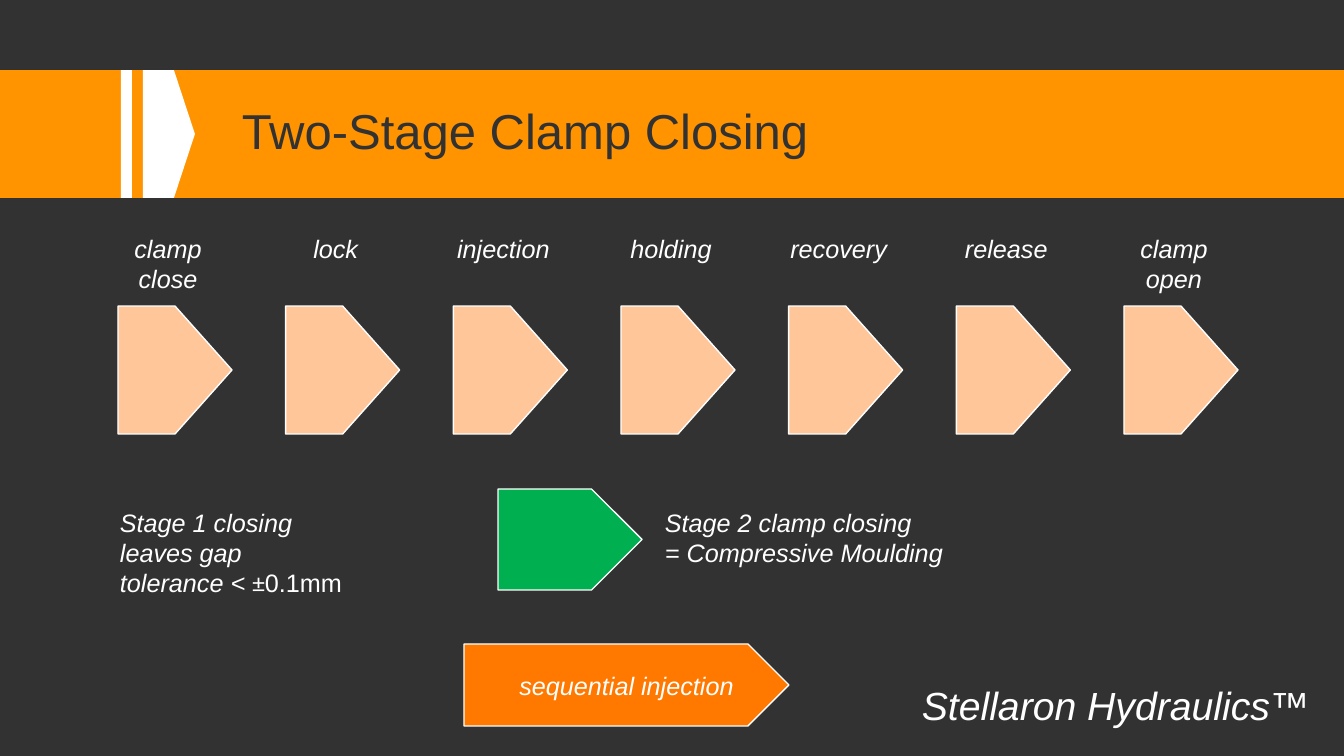
"""Build the two-stage clamp closing process slide."""
from pptx import Presentation
from pptx.dml.color import RGBColor
from pptx.enum.shapes import MSO_SHAPE as Shape
from pptx.enum.text import MSO_ANCHOR as Anchor, MSO_AUTO_SIZE as AutoSize, PP_ALIGN as Align
from pptx.util import Pt

COLORS = {"dark": "323232", "band": "FF9300", "white": "FFFFFF",
          "peach": "FFC699", "orange": "FF7900", "green": "00B050"}
STEPS = ["clamp close", "lock", "injection", "holding", "recovery", "release", "clamp open"]
TITLE = "Two-Stage Clamp Closing"
STAGE_1 = ["Stage 1 closing", "leaves gap",
           [("tolerance < ", {}), ("±", {"font": "Calibri", "italic": False}),
            ("0.1mm", {"italic": False})]]
STAGE_2 = ["Stage 2 clamp closing", "= Compressive Moulding"]
SEQUENTIAL = "sequential injection"
BRAND = "Stellaron Hydraulics™"

PAGE_WIDTH, PAGE_HEIGHT = 1344, 756
SCALE = 12192000 / PAGE_WIDTH
BAND_TOP, BAND_HEIGHT = 70, 128
BAND_BOTTOM = BAND_TOP + BAND_HEIGHT
CHEVRON = [(143, BAND_TOP), (174, BAND_TOP), (195, BAND_TOP + BAND_HEIGHT // 2),
           (174, BAND_BOTTOM), (143, BAND_BOTTOM)]
FIRST_STEP, LAST_STEP = 118, 1124
STEP_PITCH = (LAST_STEP - FIRST_STEP) / (len(STEPS) - 1)
LABEL_SHIFT = 14


def px(length):
    return round(length * SCALE)


def rgb(name):
    return RGBColor.from_string(COLORS[name])


def paint(shape, fill, line=None):
    shape.shadow.inherit = False
    shape.fill.solid()
    shape.fill.fore_color.rgb = rgb(fill)
    if line:
        shape.line.color.rgb = rgb(line)
        shape.line.width = Pt(1)
    else:
        shape.line.fill.background()


def add_block(page, kind, area, fill, line=None):
    shape = page.shapes.add_shape(kind, *map(px, area))
    paint(shape, fill, line)


def add_text(page, lines, area, size=18, color="white", italic=True, align=Align.LEFT,
             anchor=Anchor.TOP, wrap=True, spacing=None, grow=True):
    box = page.shapes.add_textbox(*map(px, area))
    frame = box.text_frame
    frame.word_wrap = wrap
    frame.auto_size = AutoSize.SHAPE_TO_FIT_TEXT if grow else AutoSize.NONE
    frame.vertical_anchor = anchor
    for index, line in enumerate([lines] if isinstance(lines, str) else lines):
        para = frame.paragraphs[0] if index == 0 else frame.add_paragraph()
        para.alignment = align
        if spacing:
            para.line_spacing = spacing
        for text, style in [(line, {})] if isinstance(line, str) else line:
            span = para.add_run()
            span.text = text
            span.font.name = style.get("font", "Arial")
            span.font.size = Pt(size)
            span.font.italic = style.get("italic", italic)
            span.font.color.rgb = rgb(color)


def add_banner(page):
    add_block(page, Shape.RECTANGLE, (0, BAND_TOP, PAGE_WIDTH, BAND_HEIGHT), "band")
    add_block(page, Shape.RECTANGLE, (121, BAND_TOP, 11, BAND_HEIGHT), "white")
    outline = page.shapes.build_freeform(*CHEVRON[0], scale=SCALE)
    outline.add_line_segments(CHEVRON[1:], close=True)
    paint(outline.convert_to_shape(), "white")
    add_text(page, TITLE, (232, BAND_TOP, 1020, BAND_HEIGHT), size=35, color="dark",
             italic=False, anchor=Anchor.MIDDLE, spacing=0.9, grow=False)


def add_steps(page):
    for index, step in enumerate(STEPS):
        left = FIRST_STEP + index * STEP_PITCH
        add_block(page, Shape.PENTAGON, (left, 306, 114, 128), "peach", "white")
        label_height = 71 if " " in step else 40
        add_text(page, step, (left - LABEL_SHIFT, 228, 128, label_height), align=Align.CENTER)


def main():
    deck = Presentation()
    deck.slide_width, deck.slide_height = px(PAGE_WIDTH), px(PAGE_HEIGHT)
    page = deck.slides.add_slide(deck.slide_layouts[6])
    page.background.fill.solid()
    page.background.fill.fore_color.rgb = rgb("dark")
    add_banner(page)
    add_steps(page)
    add_block(page, Shape.PENTAGON, (464, 644, 325, 82), "orange", "white")
    add_text(page, SEQUENTIAL, (464, 665, 325, 40), align=Align.CENTER)
    add_block(page, Shape.PENTAGON, (498, 489, 144, 101), "green", "white")
    add_text(page, STAGE_2, (655, 502, 366, 71))
    add_text(page, STAGE_1, (110, 502, 366, 102))
    add_text(page, BRAND, (906, 676, 419, 58), size=28, align=Align.CENTER, wrap=False)
    deck.save("out.pptx")


if __name__ == "__main__":
    main()
